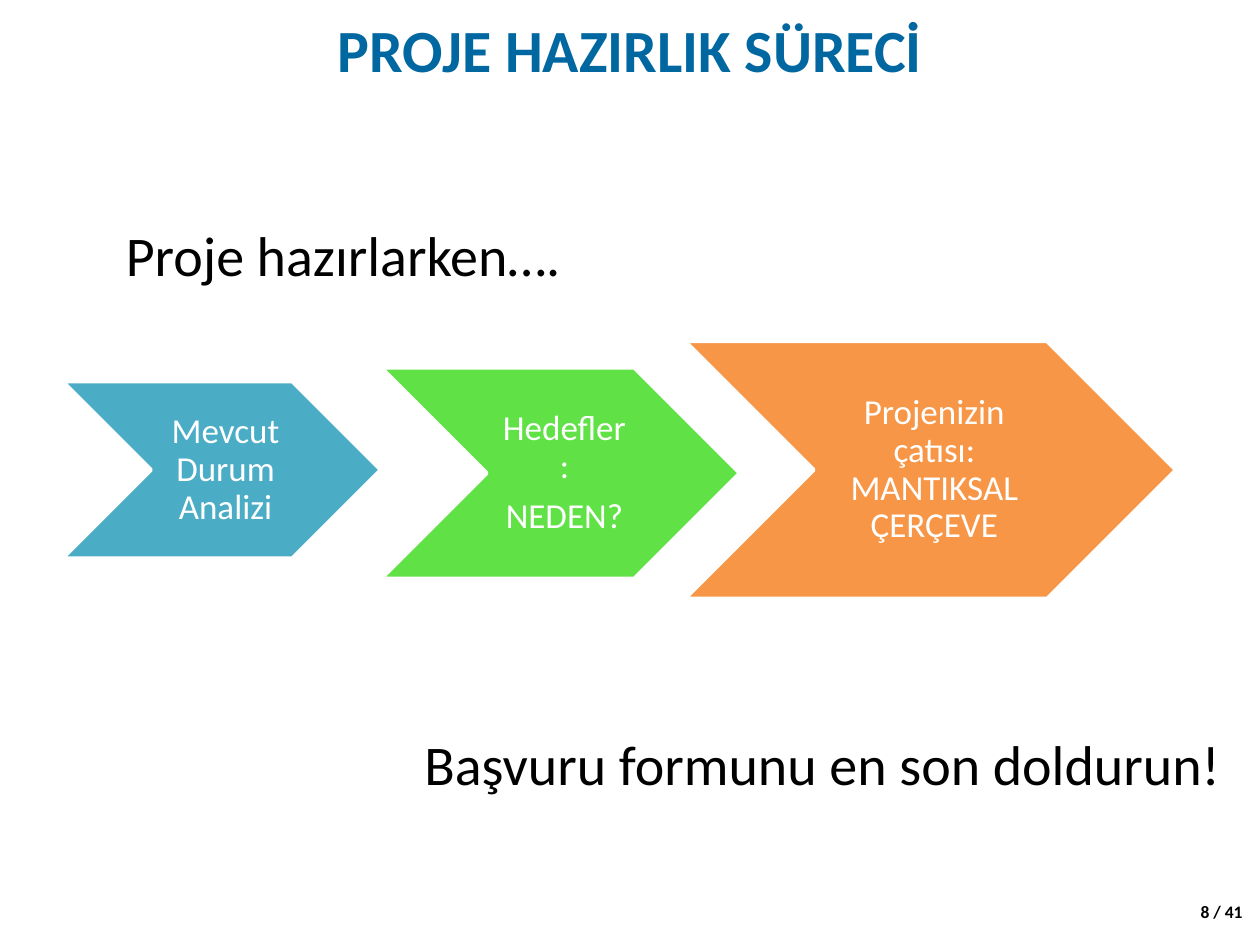
import pptx
import pptx.dml.color
import pptx.enum.shapes
import pptx.enum.text
import pptx.util

Inches = pptx.util.Inches
Pt = pptx.util.Pt
ALIGN = pptx.enum.text.PP_ALIGN
ANCHOR = pptx.enum.text.MSO_ANCHOR

FONT = "Calibri"
COLORS = {
    "title": "0067A0",
    "text": "000000",
    "white": "FFFFFF",
    "analysis": "4BACC6",
    "goals": "60E146",
    "framework": "F79646",
}

# Each step: left, top, width, height in inches, colour, paragraphs
STEPS = [
    (0.5, 3.03, 2.52, 1.4, "analysis", ["Mevcut Durum Analizi"]),
    (3.03, 2.92, 2.84, 1.67, "goals", ["Hedefler:", "NEDEN?"]),
    (5.44, 2.71, 3.89, 2.04, "framework",
     ["Projenizin çatısı: MANTIKSAL ÇERÇEVE"]),
]


def color(name):
    return pptx.dml.color.RGBColor.from_string(COLORS[name])


def format_font(paragraph, size, color_name, bold=False):
    font = paragraph.font
    font.name = FONT
    font.size = Pt(size)
    font.bold = bold
    font.color.rgb = color(color_name)


def set_title(slide, text):
    title = slide.shapes.title
    title.left, title.top = Inches(0.5), Inches(0.07)
    title.width, title.height = Inches(9), Inches(0.63)
    frame = title.text_frame
    frame.text = text
    frame.vertical_anchor = ANCHOR.MIDDLE
    frame.auto_size = pptx.enum.text.MSO_AUTO_SIZE.NONE
    paragraph = frame.paragraphs[0]
    paragraph.alignment = ALIGN.CENTER
    format_font(paragraph, 34.2, "title", bold=True)


def add_text(slide, left, top, width, height, text, size, bold=False):
    box = slide.shapes.add_textbox(
        Inches(left), Inches(top), Inches(width), Inches(height))
    frame = box.text_frame
    frame.word_wrap = False
    frame.text = text
    format_font(frame.paragraphs[0], size, "text", bold)


def add_step(slide, left, top, width, height, fill, lines):
    chevron = slide.shapes.add_shape(
        pptx.enum.shapes.MSO_SHAPE.CHEVRON,
        Inches(left), Inches(top), Inches(width), Inches(height))
    chevron.shadow.inherit = False
    chevron.fill.solid()
    chevron.fill.fore_color.rgb = color(fill)
    chevron.line.color.rgb = color("white")
    chevron.line.width = Pt(2)

    frame = chevron.text_frame
    frame.word_wrap = True
    frame.vertical_anchor = ANCHOR.MIDDLE
    frame.margin_left = Inches(0.09)
    frame.margin_top = frame.margin_right = frame.margin_bottom = Inches(0.03)
    frame.text = "\n".join(lines)
    for paragraph in frame.paragraphs:
        paragraph.alignment = ALIGN.CENTER
        paragraph.line_spacing = 0.9
        paragraph.space_after = Pt(7)
        format_font(paragraph, 20, "white")


def main():
    presentation = pptx.Presentation()
    presentation.slide_width = Inches(10)
    presentation.slide_height = Inches(7.5)
    slide = presentation.slides.add_slide(presentation.slide_layouts[5])

    # Title and page number
    set_title(slide, "PROJE HAZIRLIK SÜRECİ")
    add_text(slide, 9.43, 7.1, 0.68, 0.3, "8 / 41", 10, bold=True)

    # Growing chevrons of the process
    for step in STEPS:
        add_step(slide, *step)

    # Opening and closing remarks
    add_text(slide, 0.9, 1.7, 3.69, 0.64, "Proje hazırlarken….", 32)
    add_text(slide, 3.27, 5.74, 6.59, 0.64,
             "Başvuru formunu en son doldurun!", 32)

    presentation.save("out.pptx")


if __name__ == "__main__":
    main()
